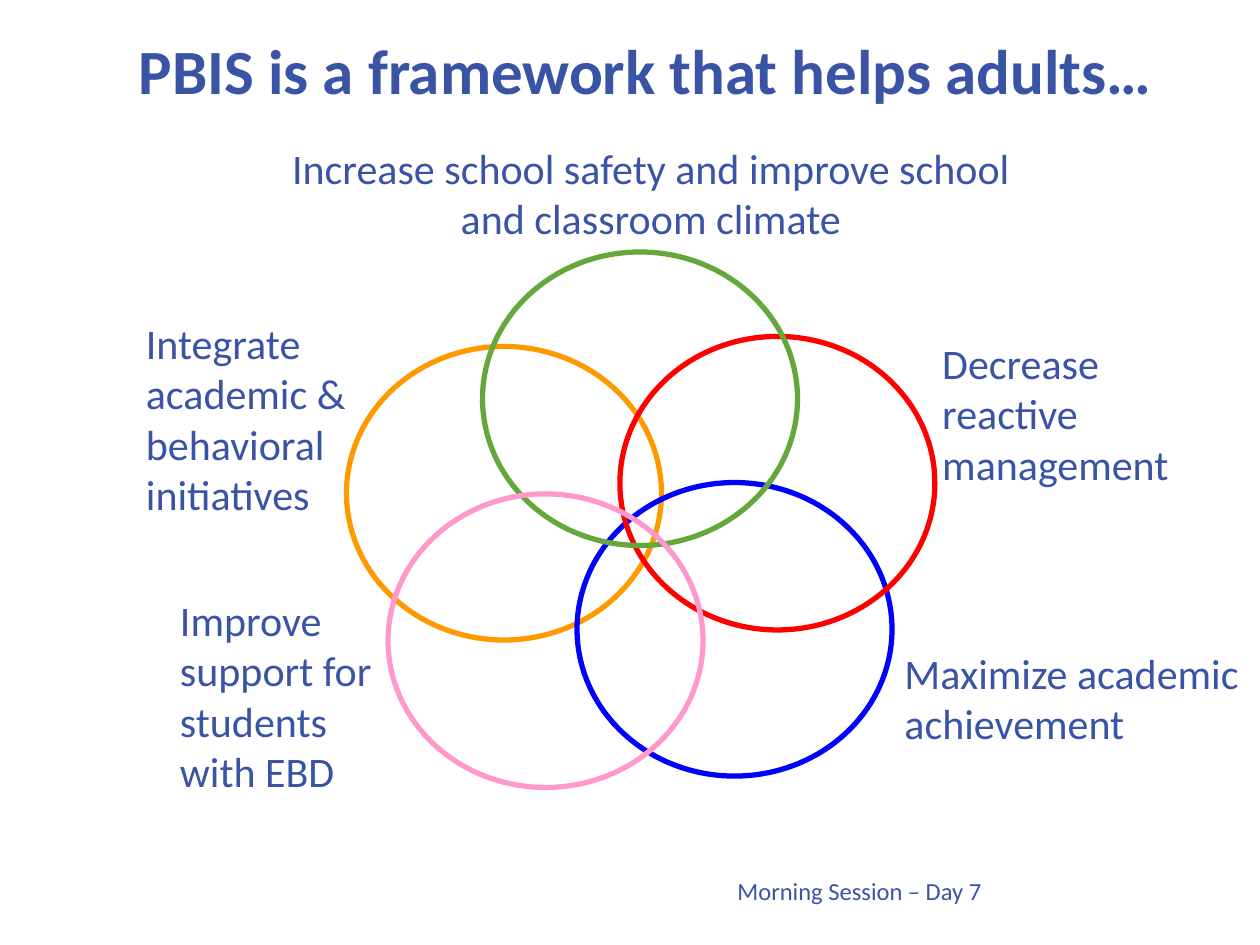
from pptx import Presentation
from pptx.dml.color import RGBColor
from pptx.enum.shapes import MSO_SHAPE as Shape
from pptx.enum.text import MSO_ANCHOR as Anchor, MSO_AUTO_SIZE as AutoSize, PP_ALIGN as Align
from pptx.util import Inches, Pt


def color(value):
    return RGBColor.from_string(value)


def write_text(shape, lines, size, ink, align, anchor=Anchor.TOP, bold=False):
    frame = shape.text_frame
    frame_format = {
        "word_wrap": True,
        "auto_size": AutoSize.NONE,
        "vertical_anchor": anchor,
    }
    for name, value in frame_format.items():
        setattr(frame, name, value)
    frame.text = "\n".join(lines)
    font_format = {"name": "Calibri", "size": Pt(size), "bold": bold}
    for paragraph in frame.paragraphs:
        paragraph.alignment = align
        for name, value in font_format.items():
            setattr(paragraph.font, name, value)
        paragraph.font.color.rgb = color(ink)


presentation = Presentation()
presentation.slide_width = Inches(10)
presentation.slide_height = Inches(7.5)
slide = presentation.slides.add_slide(presentation.slide_layouts[5])

title = slide.shapes.title
title_place = {"left": 1, "top": 0.42, "width": 8.42, "height": 0.33}
for name, value in title_place.items():
    setattr(title, name, Inches(value))
write_text(title, ["PBIS is a framework that helps adults…"], 36, "3A54A5",
           Align.LEFT, Anchor.MIDDLE, bold=True)
title.text_frame.paragraphs[0].line_spacing = 0.9

circles = [
    (2.75, 2.75, "FF9900"),
    (4.58, 3.83, "0000FF"),
    (4.92, 2.67, "FF0000"),
    (3.83, 2, "64A73B"),
    (3.08, 3.92, "FF99CC"),
]
for left, top, outline in circles:
    circle = slide.shapes.add_shape(
        Shape.OVAL, Inches(left), Inches(top), Inches(2.5), Inches(2.33))
    circle.shadow.inherit = False
    circle.fill.background()
    circle.line.color.rgb = color(outline)
    circle.line.width = Pt(3)

labels = [
    (2.04, 1.08, 6.25, 0.5, Align.CENTER,
     ["Increase school safety and improve school and classroom climate"]),
    (7.38, 2.63, 2.33, 0.91, Align.LEFT, ["Decrease reactive management"]),
    (7.08, 5.09, 2.92, 0.91, Align.LEFT, ["Maximize academic achievement"]),
    (1.33, 4.67, 1.75, 0.5, Align.LEFT, ["Improve", "support for students with EBD"]),
    (1.06, 2.47, 2.17, 1.31, Align.LEFT,
     ["Integrate academic & behavioral initiatives"]),
]
for left, top, width, height, align, lines in labels:
    label = slide.shapes.add_textbox(
        Inches(left), Inches(top), Inches(width), Inches(height))
    write_text(label, lines, 24, "3A54A5", align)

session = slide.shapes.add_textbox(Inches(2.32), Inches(6.9), Inches(5.57), Inches(0.34))
write_text(session, ["Morning Session – Day 7"], 14, "3A53A5", Align.RIGHT)

presentation.save("out.pptx")
